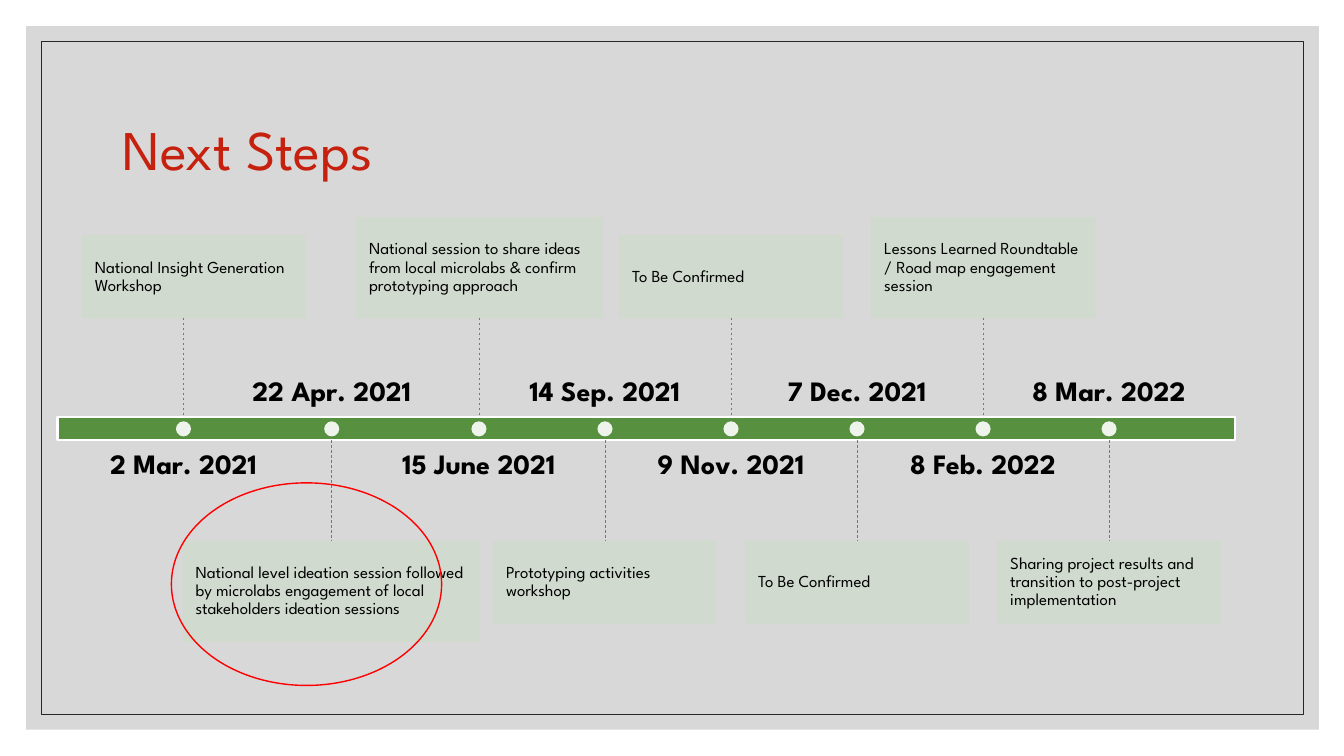
from dataclasses import dataclass
from typing import Any

from lxml import etree
from pptx import Presentation
from pptx import util as u
from pptx.dml.color import RGBColor
from pptx.enum import dml, shapes, text
from pptx.oxml import ns

WHITE = RGBColor(0xFF, 0xFF, 0xFF)
BLACK = RGBColor(0x00, 0x00, 0x00)
PANEL_GREY = RGBColor(0xBF, 0xBF, 0xBF)
FRAME_GREY = RGBColor(0x26, 0x26, 0x26)
TITLE_RED = RGBColor(0xC6, 0x21, 0x0E)
MARK_RED = RGBColor(0xFF, 0x00, 0x00)
BAR_GREEN = RGBColor(0x57, 0x90, 0x3F)
CARD_GREEN = RGBColor(0xD0, 0xDB, 0xCD)

RECT = shapes.MSO_SHAPE.RECTANGLE
OVAL = shapes.MSO_SHAPE.OVAL
LEFT, CENTER = text.PP_ALIGN.LEFT, text.PP_ALIGN.CENTER
TOP, MIDDLE, BOTTOM = (text.MSO_ANCHOR.TOP, text.MSO_ANCHOR.MIDDLE,
                       text.MSO_ANCHOR.BOTTOM)

BAR_TOP, BAR_HEIGHT = 4.14, 0.23
BAR_BOTTOM = BAR_TOP + BAR_HEIGHT
UPPER_CARD_BOTTOM, LOWER_CARD_TOP = 3.15, 5.37
DOT = 0.15
DATE_WIDTH, DATE_HEIGHT = 2, 0.33

TITLE_FONT = {"size": u.Pt(40), "name": "League Spartan", "bold": False}
DATE_FONT = {"size": u.Pt(20), "name": "League Spartan", "bold": True}
CARD_FONT = {"size": u.Pt(12), "name": "League Spartan", "bold": False}


@dataclass
class Step:
    date: str
    x: float
    task: str
    card_left: float
    card_width: float = 2.2
    card_height: float = 0.81


# Steps alternate: card above the bar, then card below it
STEPS = [
    Step("2 Mar. 2021", 1.82, "National Insight Generation Workshop", 0.82),
    Step("22 Apr. 2021", 3.29,
         "National level ideation session followed by microlabs engagement "
         "of local stakeholders ideation sessions", 1.82, 2.93, 0.99),
    Step("15 June 2021", 4.75,
         "National session to share ideas from local microlabs & confirm "
         "prototyping approach", 3.54, 2.43, 0.99),
    Step("14 Sep. 2021", 6, "Prototyping activities workshop", 4.9),
    Step("9 Nov. 2021", 7.25, "To Be Confirmed", 6.15),
    Step("7 Dec. 2021", 8.5, "To Be Confirmed", 7.4),
    Step("8 Feb. 2022", 9.75,
         "Lessons Learned Roundtable / Road map engagement session",
         8.65, card_height=0.99),
    Step("8 Mar. 2022", 11,
         "Sharing project results and transition to post-project "
         "implementation", 9.9),
]


def set_opacity(color_format: Any, percent: int) -> None:
    for color in color_format._xPr.iter(ns.qn("a:srgbClr")):
        etree.SubElement(color, ns.qn("a:alpha"), val=str(percent * 1000))


def add_block(slide: Any, kind: Any, left: float, top: float, width: float,
              height: float, fill: RGBColor | None = None,
              line: RGBColor | None = None, line_width: float = 1,
              opacity: int = 100) -> Any:
    block = slide.shapes.add_shape(kind, u.Inches(left), u.Inches(top),
                                   u.Inches(width), u.Inches(height))
    block.shadow.inherit = False
    if fill is None:
        block.fill.background()
    else:
        block.fill.solid()
        block.fill.fore_color.rgb = fill
    if line is None:
        block.line.fill.background()
    else:
        block.line.color.rgb = line
        block.line.width = u.Pt(line_width)
    if opacity < 100:
        set_opacity(block.fill, opacity)
    return block


def write(holder: Any, words: str, font: dict[str, Any], color: RGBColor,
          align: Any, anchor: Any, inset: float, spacing: float) -> None:
    frame = holder.text_frame
    margins = {f"margin_{side}": u.Inches(inset)
               for side in ("left", "top", "right", "bottom")}
    for name, value in {"word_wrap": True, "vertical_anchor": anchor,
                        **margins}.items():
        setattr(frame, name, value)
    paragraph = frame.paragraphs[0]
    paragraph.alignment = align
    paragraph.line_spacing = spacing
    run = paragraph.add_run()
    run.text = words
    for name, value in font.items():
        setattr(run.font, name, value)
    run.font.color.rgb = color


def add_label(slide: Any, left: float, top: float, width: float,
              height: float) -> Any:
    return slide.shapes.add_textbox(u.Inches(left), u.Inches(top),
                                    u.Inches(width), u.Inches(height))


def add_stem(slide: Any, x: float, top: float, bottom: float) -> None:
    stem = slide.shapes.add_connector(
        shapes.MSO_CONNECTOR.STRAIGHT, u.Inches(x), u.Inches(top),
        u.Inches(x), u.Inches(bottom))
    stem.line.color.rgb = BAR_GREEN
    stem.line.width = u.Pt(0.5)
    stem.line.dash_style = dml.MSO_LINE.DASH
    etree.SubElement(stem._element.spPr, ns.qn("a:effectLst"))


def add_step(slide: Any, step: Step, above: bool) -> None:
    # Date on the opposite side of the bar from the card
    date = add_label(slide, step.x - DATE_WIDTH / 2, 4.47 if above else 3.71,
                     DATE_WIDTH, DATE_HEIGHT)
    write(date, step.date, DATE_FONT, BLACK, CENTER,
          TOP if above else BOTTOM, 0, 0.9)

    # Task card
    card_top = (UPPER_CARD_BOTTOM - step.card_height if above
                else LOWER_CARD_TOP)
    card = add_block(slide, RECT, step.card_left, card_top, step.card_width,
                     step.card_height, CARD_GREEN, CARD_GREEN, opacity=90)
    set_opacity(card.line.fill, 90)
    write(card, step.task, CARD_FONT, BLACK, LEFT, MIDDLE, 0.12, 0.9)

    # Stem and dot
    if above:
        add_stem(slide, step.x, UPPER_CARD_BOTTOM, BAR_TOP)
    else:
        add_stem(slide, step.x, BAR_BOTTOM, LOWER_CARD_TOP)
    add_block(slide, OVAL, step.x - DOT / 2, BAR_TOP + (BAR_HEIGHT - DOT) / 2,
              DOT, DOT, WHITE, opacity=90)


def main() -> None:
    deck = Presentation()
    deck.slide_width, deck.slide_height = u.Inches(13.33), u.Inches(7.5)
    slide = deck.slides.add_slide(deck.slide_layouts[6])

    # Background panel and frame
    add_block(slide, RECT, 0.26, 0.26, 12.82, 6.98, PANEL_GREY, opacity=60)
    add_block(slide, RECT, 0.41, 0.41, 12.52, 6.68, line=FRAME_GREY,
              line_width=0.5)

    # Title
    title = add_label(slide, 1.17, 0.7, 11, 1.5)
    write(title, "Next Steps", TITLE_FONT, TITLE_RED, LEFT, MIDDLE, 0.05, 1.07)

    # Timeline
    add_block(slide, RECT, 0.57, BAR_TOP, 11.68, BAR_HEIGHT, BAR_GREEN, WHITE,
              1.5)
    for index, step in enumerate(STEPS):
        add_step(slide, step, above=index % 2 == 0)

    # Highlight around the April step
    add_block(slide, OVAL, 1.7, 4.79, 2.68, 2.01, line=MARK_RED)

    deck.save("out.pptx")


if __name__ == "__main__":
    main()
